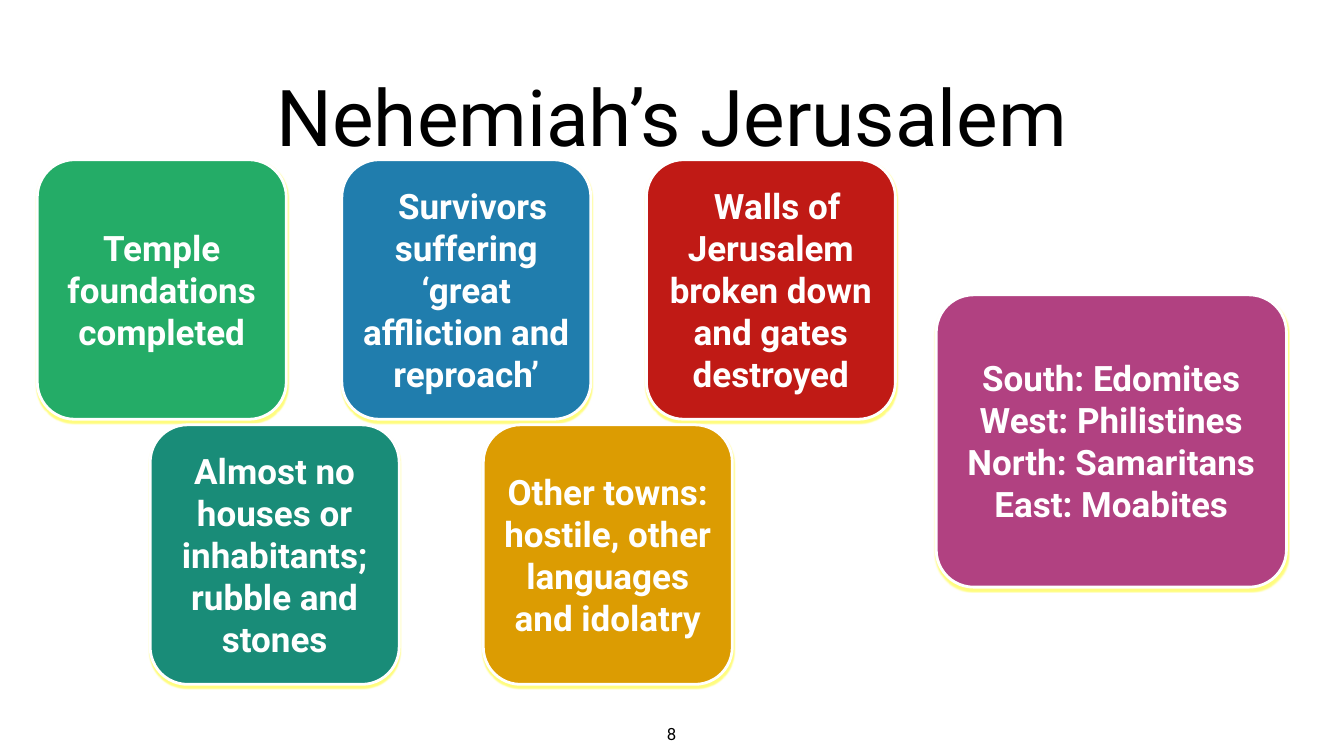
from lxml.etree import SubElement
from pptx import Presentation
from pptx.dml.color import RGBColor
from pptx.enum.shapes import MSO_SHAPE as Preset
from pptx.enum.text import MSO_ANCHOR as Anchor, PP_ALIGN as Align
from pptx.oxml.ns import qn
from pptx.util import Cm, Pt

COLOURS = {
    "paper": "FFFFFF", "ink": "000000", "glow": "FFFB00",
    "temple": "24AC67", "survivors": "207DAD", "walls": "C01A15",
    "houses": "198C78", "towns": "DC9C02", "neighbours": "B14181",
}
FONT = "Roboto"
INSET = 0.14
CORNER = 1.88
CARD_WIDTH, CARD_HEIGHT = 12.55, 13.08
FIRST_LINE_INDENT = 0.64

CONDITIONS = [
    ("temple", "Temple foundations completed", False),
    ("survivors", "Survivors suffering ‘great affliction and reproach’", True),
    ("walls", "Walls of Jerusalem broken down and gates destroyed", True),
]
SURROUNDINGS = [
    ("houses", "Almost no houses or inhabitants; rubble and stones", False),
    ("towns", "Other towns: hostile, other languages and idolatry", False),
]
NEIGHBOURS = "South: Edomites\nWest: Philistines\nNorth: Samaritans\nEast: Moabites"


def colour(name):
    """Return the named colour."""
    return RGBColor.from_string(COLOURS[name])


def write(frame, text, size, ink, bold=False, anchor=Anchor.MIDDLE, wrap=True):
    """Fill a text frame with centred text."""
    frame.text = text
    frame.word_wrap = wrap
    frame.vertical_anchor = anchor
    frame.margin_left = frame.margin_right = Cm(INSET)
    frame.margin_top = frame.margin_bottom = Cm(INSET)
    for paragraph in frame.paragraphs:
        paragraph.alignment = Align.CENTER
        for run in paragraph.runs:
            run.font.name = FONT
            run.font.size = Pt(size)
            run.font.bold = bold
            run.font.color.rgb = colour(ink)


def add_glow(shape):
    """Give a shape a soft coloured shadow just below it."""
    shape.shadow.inherit = False
    effects = shape._element.spPr.find(qn("a:effectLst"))
    glow = SubElement(effects, qn("a:outerShdw"), blurRad=str(Pt(2)),
                      dist=str(Pt(3)), dir="5400000", rotWithShape="0")
    tint = SubElement(glow, qn("a:srgbClr"), val=COLOURS["glow"])
    SubElement(tint, qn("a:alpha"), val="50000")


def add_card(slide, box, fill, text, indented=False):
    """Draw one rounded card with bold white text."""
    card = slide.shapes.add_shape(Preset.ROUNDED_RECTANGLE, *map(Cm, box))
    card.adjustments[0] = CORNER / min(box[2:])
    card.fill.solid()
    card.fill.fore_color.rgb = colour(fill)
    card.line.color.rgb = colour("paper")
    card.line.width = Pt(4)
    add_glow(card)
    write(card.text_frame, text, 50, "paper", bold=True)
    if indented:
        opening = card.text_frame.paragraphs[0]
        opening.level = 1
        properties = opening._p.get_or_add_pPr()
        properties.set("marL", "0")
        properties.set("indent", str(Cm(FIRST_LINE_INDENT)))


def add_card_row(slide, left, top, pitch, cards):
    """Lay equal cards out in a row at an even pitch."""
    for column, (fill, text, indented) in enumerate(cards):
        box = (left + column * pitch, top, CARD_WIDTH, CARD_HEIGHT)
        add_card(slide, box, fill, text, indented)


def add_title(slide, box, text):
    """Write the slide title."""
    title = slide.shapes.add_textbox(*map(Cm, box))
    write(title.text_frame, text, 112, "ink")


def add_page_number(slide, box, number):
    """Write the page number at the foot."""
    page = slide.shapes.add_textbox(*map(Cm, box))
    write(page.text_frame, number, 24, "ink", anchor=Anchor.TOP, wrap=False)


def main():
    """Build and save the slide."""
    deck = Presentation()
    deck.slide_width, deck.slide_height = Cm(67.74), Cm(38.1)
    slide = deck.slides.add_slide(deck.slide_layouts[6])
    slide.background.fill.solid()
    slide.background.fill.fore_color.rgb = colour("paper")
    add_page_number(slide, (33.45, 36.35, 0.79, 1.3), "8")
    add_title(slide, (4.7, 2.64, 58.34, 6.35), "Nehemiah’s Jerusalem")
    add_card_row(slide, 1.88, 8.05, 15.35, CONDITIONS)
    add_card_row(slide, 7.57, 21.41, 16.79, SURROUNDINGS)
    add_card(slide, (47.19, 14.86, 17.65, 14.73), "neighbours", NEIGHBOURS)
    deck.save("out.pptx")


if __name__ == "__main__":
    main()
